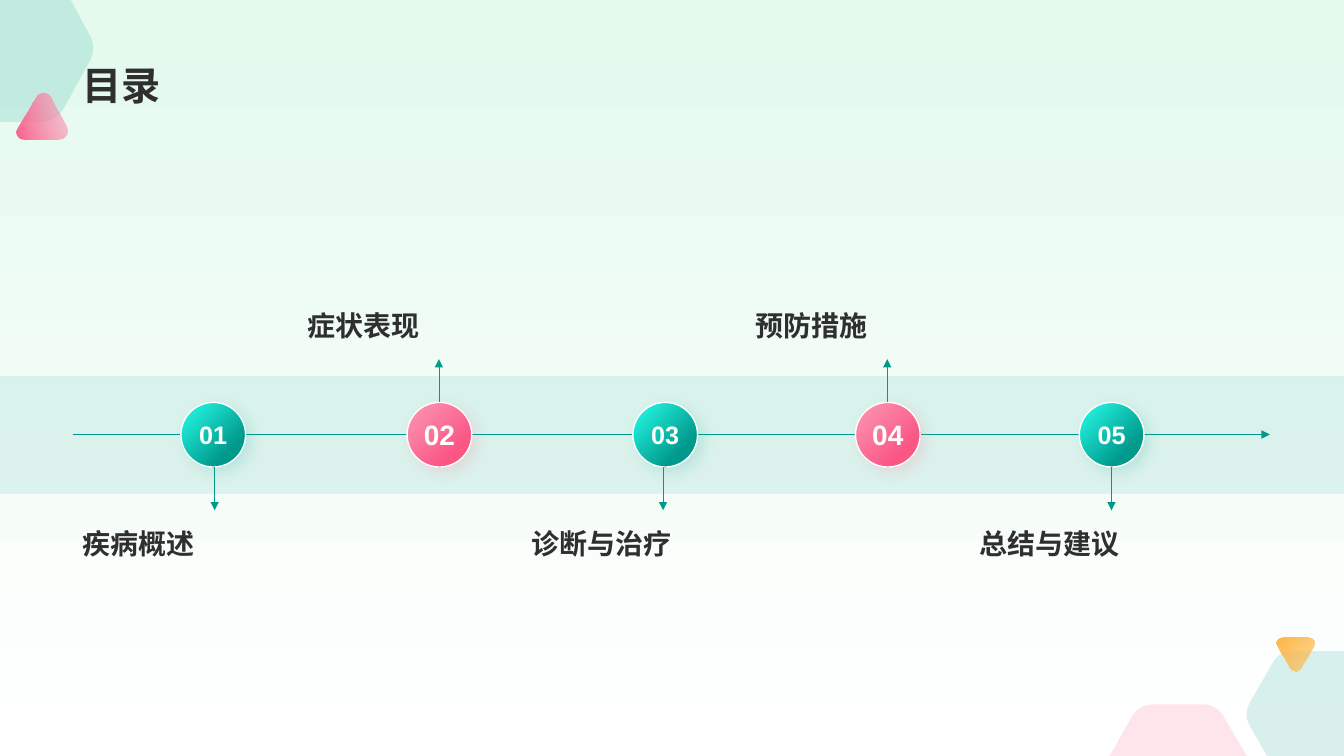
from dataclasses import dataclass
from math import dist

from lxml.etree import SubElement
from pptx import Presentation
from pptx.dml.color import RGBColor
from pptx.enum.shapes import MSO_CONNECTOR, MSO_SHAPE
from pptx.enum.text import MSO_ANCHOR, PP_ALIGN
from pptx.oxml.ns import qn
from pptx.util import Cm, Pt


@dataclass(frozen=True)
class Theme:
    font: str = "Arial"
    ink: str = "2F2F2F"
    white: str = "FFFFFF"
    mint: str = "E3FAED"
    teal: str = "009A8C"
    aqua: str = "29FFEC"
    pink: str = "FA5785"
    rose: str = "FC9AB6"
    amber: str = "FFB644"
    title_size: int = 28
    chapter_size: int = 20
    teal_number_size: int = 18
    pink_number_size: int = 20


THEME = Theme()
SLIDE_WIDTH, SLIDE_HEIGHT = 33.87, 19.05

TITLE = "目录"
TITLE_BOX = (1.83, 0.36, 30.18, 2.49)
CHAPTERS = [
    ("01", "疾病概述", 4.56),
    ("02", "症状表现", 10.26),
    ("03", "诊断与治疗", 15.95),
    ("04", "预防措施", 21.56),
    ("05", "总结与建议", 27.2),
]
BAND_TOP, BAND_HEIGHT = 9.47, 2.98
AXIS_LEFT, AXIS_RIGHT, AXIS_TOP = 1.83, 32, 10.95
BADGE_TOP, BADGE_SIZE = 10.14, 1.63
CHAPTER_LEFT, CHAPTER_STEP = 1.84, 5.65
CHAPTER_WIDTH, CHAPTER_HEIGHT = 7.14, 1.98
ABOVE_TOP, BELOW_TOP = 6.77, 13.13
POINTER_LENGTH = 1.09

ORNAMENTS = [
    {"corners": [(0, 0, 0), (1.78, 0, 0), (2.44, 1.22, 0.38), (1.42, 3.07, 0.4), (0, 3.07, 0)],
     "handle": 0.65, "stops": [(0, THEME.teal, 15)], "angle": 0},
    {"corners": [(32.24, 16.41, 0.34), (33.87, 16.41, 0), (33.87, 19.05, 0),
                 (31.93, 19.05, 0), (31.33, 18, 0.34)],
     "handle": 0.65, "stops": [(0, THEME.teal, 15)], "angle": 0},
    {"corners": [(32.05, 16.06, 0.27), (33.23, 16.06, 0.27), (32.64, 17.06, 0.27)],
     "handle": 0.5, "stops": [(0, THEME.amber, 50), (100, THEME.amber, 100)], "angle": 225},
    {"corners": [(27.97, 19.05, 0), (28.7, 17.75, 0.36), (30.66, 17.75, 0.36), (31.42, 19.05, 0)],
     "handle": 0.65, "stops": [(0, THEME.pink, 15)], "angle": 0},
    {"corners": [(1.1, 2.12, 0.36), (1.84, 3.5, 0.36), (0.27, 3.51, 0.36)],
     "handle": 0.45, "stops": [(0, THEME.rose, 50), (100, THEME.pink, 96)], "angle": 165},
]


def rgb(colour):
    return RGBColor.from_string(colour)


def paint(fill, element, stops, angle=0):
    if len(stops) == 1:
        fill.solid()
        fill.fore_color.rgb = rgb(stops[0][1])
    else:
        fill.gradient()
        fill.gradient_angle = (360 - angle) % 360
        for gradient_stop, (position, colour, _) in zip(fill.gradient_stops, stops):
            gradient_stop.position = position / 100
            gradient_stop.color.rgb = rgb(colour)
    for colour_element, (_, _, opacity) in zip(element.iter(qn("a:srgbClr")), stops):
        if opacity < 100:
            SubElement(colour_element, qn("a:alpha"), val=str(opacity * 1000))


def write(shape, text, *, size, colour=THEME.ink, anchor=MSO_ANCHOR.TOP,
          align=PP_ALIGN.LEFT, wrap=True):
    frame = shape.text_frame
    frame.word_wrap = wrap
    frame.vertical_anchor = anchor
    paragraph = frame.paragraphs[0]
    paragraph.alignment = align
    run = paragraph.add_run()
    run.text = text
    run.font.name = THEME.font
    run.font.size = Pt(size)
    run.font.bold = True
    run.font.color.rgb = rgb(colour)


def toward(start, end, share):
    return tuple(a + (b - a) * share for a, b in zip(start, end))


def rounded_outline(corners, handle):
    points, curve_starts = [], []
    for index, (x, y, cut) in enumerate(corners):
        corner = (x, y)
        if not cut:
            points.append(corner)
            continue
        before = corners[index - 1][:2]
        after = corners[(index + 1) % len(corners)][:2]
        entry = toward(corner, before, cut / dist(corner, before))
        leave = toward(corner, after, cut / dist(corner, after))
        curve_starts.append(len(points) + 1)
        points += [entry, toward(entry, corner, handle), toward(leave, corner, handle), leave]
    return [(Cm(x), Cm(y)) for x, y in points], curve_starts


def add_ornament(slide, corners, handle, stops, angle):
    (first, *rest), curve_starts = rounded_outline(corners, handle)
    builder = slide.shapes.build_freeform(*first)
    builder.add_line_segments(rest, close=True)
    ornament = builder.convert_to_shape()
    outline = ornament.element.find(".//" + qn("a:pathLst"))[0]
    segments = list(outline)
    for start in curve_starts:
        control, *others = segments[start:start + 3]
        curve = SubElement(outline, qn("a:cubicBezTo"))
        outline.replace(control, curve)
        curve.append(control[0])
        for segment in others:
            curve.append(segment[0])
            outline.remove(segment)
    ornament.shadow.inherit = False
    ornament.line.fill.background()
    paint(ornament.fill, ornament.element, stops, angle)


def cast_shadow(shape, colour):
    shape.shadow.inherit = False
    effects = shape.element.spPr.find(qn("a:effectLst"))
    shadow = SubElement(effects, qn("a:outerShdw"), blurRad=str(Pt(10)), dist=str(Pt(5)),
                        dir=str(45 * 60000), algn="tl", rotWithShape="0")
    tint = SubElement(shadow, qn("a:srgbClr"), val=colour)
    SubElement(tint, qn("a:alpha"), val="15000")


def add_arrow(slide, *ends):
    arrow = slide.shapes.add_connector(MSO_CONNECTOR.STRAIGHT, *map(Cm, ends))
    arrow.line.color.rgb = rgb(THEME.teal)
    arrow.line.width = Pt(0.5)
    SubElement(arrow.line._get_or_add_ln(), qn("a:tailEnd"), type="triangle")
    SubElement(arrow._element.spPr, qn("a:effectLst"))


def add_band(slide):
    band = slide.shapes.add_shape(MSO_SHAPE.RECTANGLE, 0, Cm(BAND_TOP),
                                  Cm(SLIDE_WIDTH), Cm(BAND_HEIGHT))
    band.shadow.inherit = False
    band.line.fill.background()
    paint(band.fill, band.element, [(0, THEME.teal, 10)])


def add_chapter(slide, index, number, name, badge_left):
    above = index % 2 == 1
    light, deep, number_size = (
        (THEME.rose, THEME.pink, THEME.pink_number_size) if above
        else (THEME.aqua, THEME.teal, THEME.teal_number_size))
    badge = slide.shapes.add_shape(MSO_SHAPE.OVAL, Cm(badge_left), Cm(BADGE_TOP),
                                   Cm(BADGE_SIZE), Cm(BADGE_SIZE))
    paint(badge.fill, badge.element, [(0, light, 100), (75, deep, 100)], 45)
    badge.line.color.rgb = rgb(THEME.white)
    badge.line.width = Pt(1)
    cast_shadow(badge, deep)
    write(badge, number, size=number_size, colour=THEME.white,
          anchor=MSO_ANCHOR.MIDDLE, align=PP_ALIGN.CENTER, wrap=False)
    left = CHAPTER_LEFT + index * CHAPTER_STEP
    chapter = slide.shapes.add_textbox(Cm(left), Cm(ABOVE_TOP if above else BELOW_TOP),
                                       Cm(CHAPTER_WIDTH), Cm(CHAPTER_HEIGHT))
    write(chapter, name, size=THEME.chapter_size,
          anchor=MSO_ANCHOR.BOTTOM if above else MSO_ANCHOR.TOP)
    middle = left + CHAPTER_WIDTH / 2
    start = BADGE_TOP if above else BADGE_TOP + BADGE_SIZE
    add_arrow(slide, middle, start, middle, start + (-POINTER_LENGTH if above else POINTER_LENGTH))


def main():
    presentation = Presentation()
    presentation.slide_width, presentation.slide_height = Cm(SLIDE_WIDTH), Cm(SLIDE_HEIGHT)
    slide = presentation.slides.add_slide(presentation.slide_layouts[6])
    paint(slide.background.fill, slide.element,
          [(0, THEME.mint, 100), (100, THEME.white, 100)], 90)
    for ornament in ORNAMENTS:
        add_ornament(slide, **ornament)
    title = slide.shapes.add_textbox(*map(Cm, TITLE_BOX))
    write(title, TITLE, size=THEME.title_size, anchor=MSO_ANCHOR.BOTTOM)
    add_band(slide)
    add_arrow(slide, AXIS_LEFT, AXIS_TOP, AXIS_RIGHT, AXIS_TOP)
    for index, chapter in enumerate(CHAPTERS):
        add_chapter(slide, index, *chapter)
    presentation.save("out.pptx")


if __name__ == "__main__":
    main()
